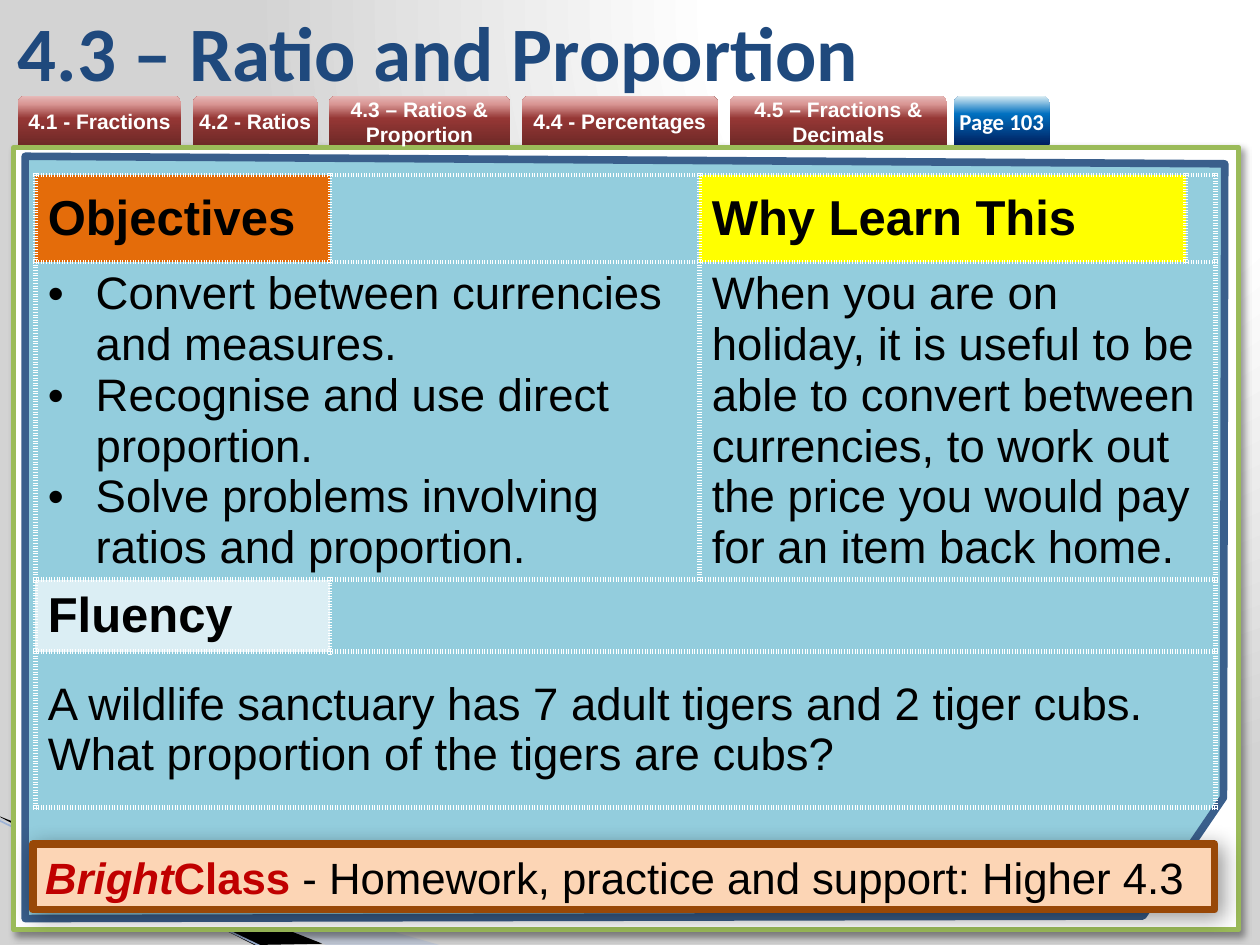
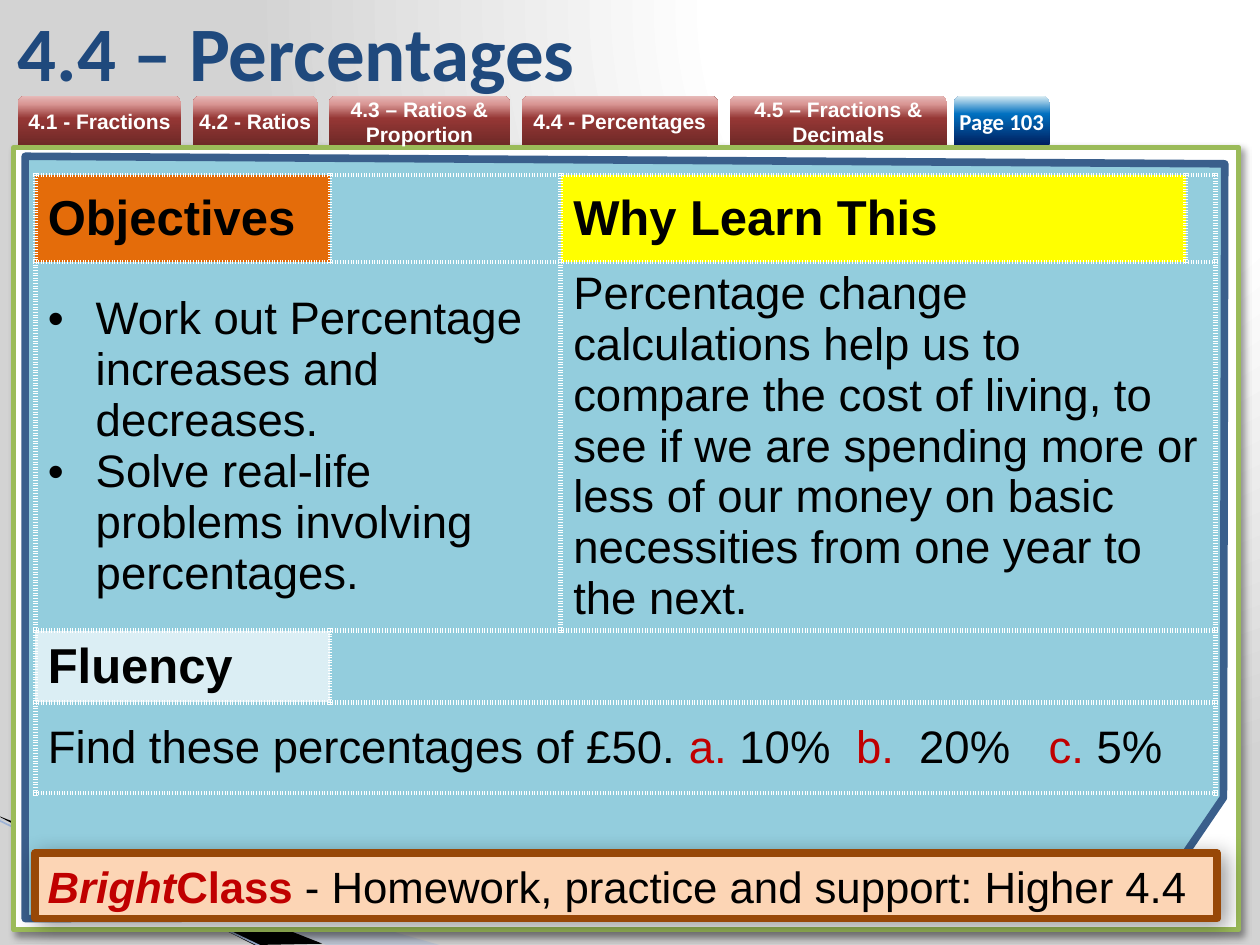
from pptx import Presentation
from pptx.dml.color import RGBColor
from pptx.enum.shapes import MSO_CONNECTOR, MSO_SHAPE
from pptx.enum.text import MSO_ANCHOR, MSO_AUTO_SIZE, PP_ALIGN
from pptx.oxml import parse_xml
from pptx.oxml.ns import nsdecls, qn
from pptx.util import Inches, Pt

rgb = RGBColor.from_string
NS = nsdecls("a")
BLACK, WHITE, RED = "000000", "FFFFFF", "C00000"
TAB_RED = [(0, "6F2927"), (54, "953735"), (83, "D99694"), (100, "E6B9B8")]
TAB_BLUE = [(0, "002060"), (63, "0070C0"), (100, "DBEEF4")]
UPWARD = f'<a:lin {NS} ang="16200000" scaled="0"/>'
CORNER = f'<a:path {NS} path="circle"><a:fillToRect l="65000" b="98000"/></a:path>'


def set_gradient(owner, fill, stops, direction):
    fill.gradient()
    grad = owner.element.find(".//" + qn("a:gradFill"))
    for child in list(grad):
        grad.remove(child)
    gs = "".join(f'<a:gs pos="{pos * 1000}"><a:srgbClr val="{c}"/></a:gs>' for pos, c in stops)
    grad.append(parse_xml(f"<a:gsLst {NS}>{gs}</a:gsLst>"))
    grad.append(parse_xml(direction))


def write(tf, parts, size, bold=False, color=BLACK, font="Arial", align=PP_ALIGN.LEFT):
    tf.text = parts[0]
    for part in parts[1:]:
        tf.paragraphs[-1].add_run().text = part
    tf.word_wrap = True
    for p in tf.paragraphs:
        p.alignment = align
        for r in p.runs:
            r.font.size, r.font.bold, r.font.name = Pt(size), bold, font
            r.font.color.rgb = rgb(color)


prs = Presentation()
prs.slide_width, prs.slide_height = Inches(10), Inches(7.5)
u = prs.slide_width // 1000
set_gradient(prs.slide_master, prs.slide_master.background.fill,
             [(0, WHITE), (40, WHITE), (100, "D3D3D3")], CORNER)
layout = prs.slide_layouts[5]
title = layout.placeholders[0]
title.left, title.top, title.width, title.height = 4 * u, 5 * u, 827 * u, 71 * u

tabs = [
    ("4.1 - Fractions", 130, 9, 12, "Arial", TAB_RED),
    ("4.2 - Ratios", 99, 9, 12, "Arial", TAB_RED),
    ("4.3 – Ratios & Proportion", 144, 9, 12, "Arial", TAB_RED),
    ("4.4 - Percentages", 156, 9, 12, "Arial", TAB_RED),
    ("4.5 – Fractions & Decimals", 173, 5, 12, "Arial", TAB_RED),
    ("Page 103", 76, 0, 13, "Calibri", TAB_BLUE),
]
swoosh = [(-1, 650), (349, 750), (259, 750), (-1, 649)]
wedge = [(0, 648), (256, 749), (202, 750), (1, 649)]
panel = [(20, 124), (972, 130), (971, 633), (907, 727), (20, 729)]

lessons = [
    {
        "title": "4.3 – Ratio and Proportion",
        "objectives": ["Convert between currencies and measures.",
                       "Recognise and use direct proportion.",
                       "Solve problems involving ratios and proportion."],
        "why": "When you are on holiday, it is useful to be able to convert between currencies, "
               "to work out the price you would pay for an item back home.",
        "fluency": ["A wildlife sanctuary has 7 adult tigers and 2 tiger cubs. "
                    "What proportion of the tigers are cubs?"],
        "cols": [234, 293, 386, 24], "last_row": 124,
        "bar": (26, 670), "unit": "4.3",
    },
    {
        "title": "4.4 – Percentages",
        "objectives": ["Work out Percentage increases and decreases.",
                       "Solve real-life problems involving percentages."],
        "why": "Percentage change calculations help us to compare the cost of living, to see if we "
               "are spending more or less of our money on basic necessities from one year to the next.",
        "fluency": ["Find these percentages of £50. ", "a.", " 10%  ", "b.", "  20%   ", "c.", " 5%"],
        "cols": [234, 183, 496, 24], "last_row": 72,
        "bar": (28, 677), "unit": "4.4",
    },
]

for lesson in lessons:
    s = prs.slides.add_slide(layout)

    for points, color in [(swoosh, "A7B9DB"), (wedge, BLACK)]:
        fb = s.shapes.build_freeform(*points[0], scale=u)
        fb.add_line_segments(points[1:])
        sp = fb.convert_to_shape()
        sp.shadow.inherit = False
        sp.fill.solid()
        sp.fill.fore_color.rgb = rgb(color)
        sp.line.fill.background()
        if points is swoosh:
            clr = sp.element.spPr.find(".//" + qn("a:srgbClr"))
            clr.append(parse_xml(f'<a:alpha {NS} val="40000"/>'))

    cn = s.shapes.add_connector(MSO_CONNECTOR.STRAIGHT, -u, 651 * u, 209 * u, 752 * u)
    cn.line.color.rgb = rgb("9EB3D6")
    cn.line.width = Pt(0.95)
    cn.element.spPr.append(parse_xml(f"<a:effectLst {NS}/>"))

    frame = s.shapes.add_shape(MSO_SHAPE.RECTANGLE, 11 * u, 117 * u, 972 * u, 621 * u)
    fb = s.shapes.build_freeform(*panel[0], scale=u)
    fb.add_line_segments(panel[1:])
    board = fb.convert_to_shape()

    x = 14
    for text, width, gap, size, font, stops in tabs:
        tab = s.shapes.add_shape(MSO_SHAPE.ROUND_2_SAME_RECTANGLE, x * u, 76 * u, width * u, 39 * u)
        tab.shadow.inherit = False
        set_gradient(tab, tab.fill, stops, UPWARD)
        tab.line.fill.background()
        tf = tab.text_frame
        tf.margin_left = tf.margin_right = tf.margin_top = tf.margin_bottom = 0
        tf.vertical_anchor = MSO_ANCHOR.MIDDLE
        write(tf, [text], size, True, WHITE, font, PP_ALIGN.CENTER)
        x += width + gap

    tf = s.shapes.title.text_frame
    write(tf, [lesson["title"]], 44, True, "1F497D", "Calibri")
    tf.auto_size = MSO_AUTO_SIZE.NONE
    tf.vertical_anchor = MSO_ANCHOR.MIDDLE

    rows = [69, 252, 57, lesson["last_row"]]
    tbl = s.shapes.add_table(4, 4, 28 * u, 139 * u, sum(lesson["cols"]) * u, sum(rows) * u).table
    tbl.first_row = tbl.horz_banding = False
    for col, width in zip(tbl.columns, lesson["cols"]):
        col.width = width * u
    for row, height in zip(tbl.rows, rows):
        row.height = height * u
    for cell in tbl.iter_cells():
        cell.vertical_anchor = MSO_ANCHOR.MIDDLE
        for side in ("lnL", "lnR", "lnT", "lnB"):
            cell._tc.get_or_add_tcPr().append(parse_xml(
                f'<a:{side} {NS} w="{Pt(3)}"><a:solidFill><a:srgbClr val="{WHITE}"/></a:solidFill>'
                f'<a:prstDash val="sysDot"/></a:{side}>'))
        cell.fill.background()
    for row, first, last in [(1, 0, 1), (1, 2, 3), (2, 1, 3), (3, 0, 3)]:
        tbl.cell(row, first).merge(tbl.cell(row, last))
    for row, col, text, color in [(0, 0, "Objectives", "E46C0A"),
                                  (0, 2, "Why Learn This", "FFFF00"),
                                  (2, 0, "Fluency", "DBEEF4")]:
        cell = tbl.cell(row, col)
        cell.fill.solid()
        cell.fill.fore_color.rgb = rgb(color)
        write(cell.text_frame, [text], 28, True)

    tf = tbl.cell(1, 0).text_frame
    write(tf, ["\n".join(lesson["objectives"])], 26)
    for p in tf.paragraphs:
        pPr = p._p.get_or_add_pPr()
        pPr.set("marL", str(38 * u))
        pPr.set("indent", str(-38 * u))
        pPr.append(parse_xml(f'<a:buFont {NS} typeface="Arial"/>'))
        pPr.append(parse_xml(f'<a:buChar {NS} char="•"/>'))
    write(tbl.cell(1, 2).text_frame, [lesson["why"]], 26)
    tf = tbl.cell(3, 0).text_frame
    write(tf, lesson["fluency"], 26)
    for r in tf.paragraphs[0].runs[1::2]:
        r.font.color.rgb = rgb(RED)

    left, top = lesson["bar"]
    bar = s.shapes.add_shape(MSO_SHAPE.RECTANGLE, left * u, top * u, 938 * u, 52 * u)
    tf = bar.text_frame
    tf.vertical_anchor = MSO_ANCHOR.MIDDLE
    write(tf, ["Bright", "Class ", f"- Homework, practice and support: Higher {lesson['unit']}"], 25)
    brand = tf.paragraphs[0].runs[:2]
    brand[0].font.italic = True
    for r in brand:
        r.font.bold = True
        r.font.color.rgb = rgb(RED)

    for sp, fill, line, weight, blur in [(frame, WHITE, "9BBB59", 3, 4),
                                         (board, "93CDDD", "3A5F8C", 4.33, 0),
                                         (bar, "FCD5B5", "984807", 4.33, 13)]:
        sp.shadow.inherit = False
        sp.fill.solid()
        sp.fill.fore_color.rgb = rgb(fill)
        sp.line.color.rgb = rgb(line)
        sp.line.width = Pt(weight)
        if blur:
            sp.element.spPr.find(qn("a:effectLst")).append(parse_xml(
                f'<a:outerShdw {NS} blurRad="{Pt(blur)}" dist="{Pt(3)}" dir="2700000" algn="tl" '
                f'rotWithShape="0"><a:srgbClr val="{BLACK}"><a:alpha val="40000"/></a:srgbClr>'
                f'</a:outerShdw>'))

prs.save("out.pptx")
